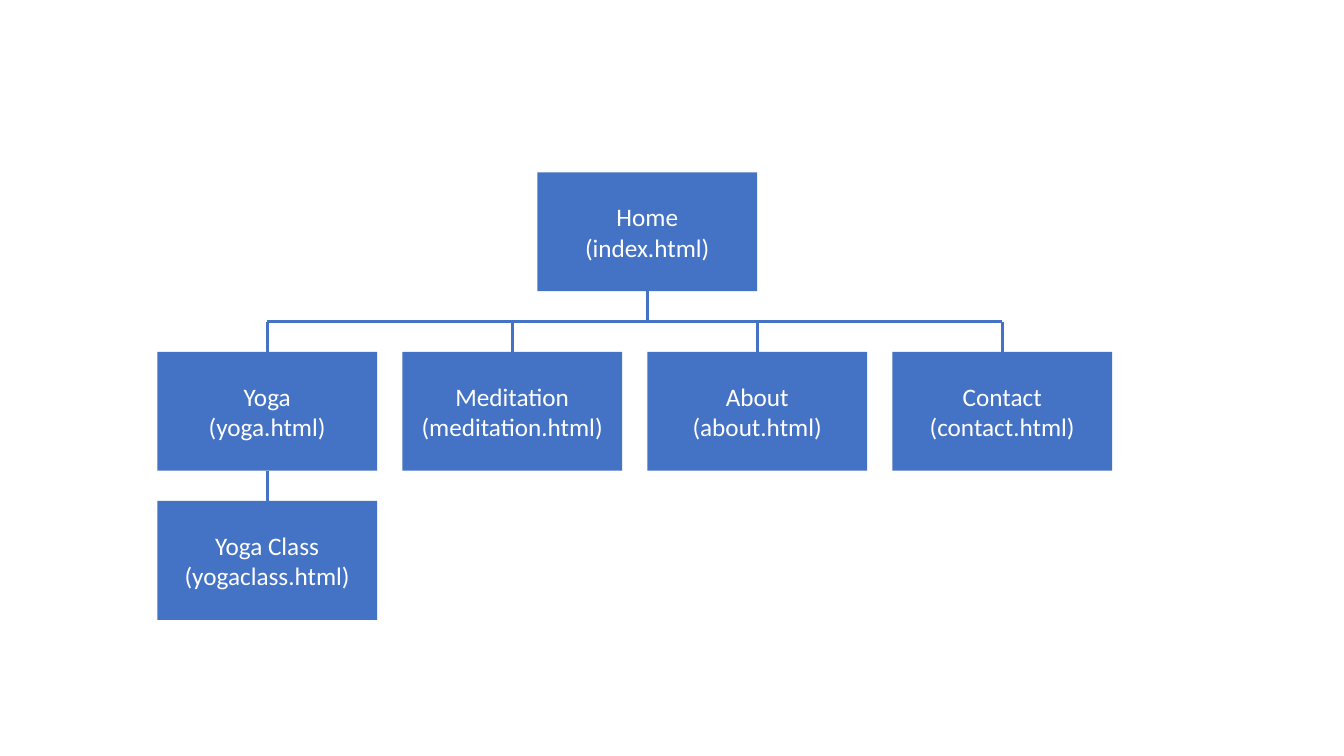
from pptx import Presentation
from pptx.dml.color import RGBColor
from pptx.enum.shapes import MSO_CONNECTOR, MSO_SHAPE
from pptx.enum.text import MSO_ANCHOR, PP_ALIGN
from pptx.oxml import parse_xml
from pptx.oxml.ns import nsdecls
from pptx.util import Inches, Pt

BLUE = "4472C4"
WHITE = "FFFFFF"
CARD_WIDTH = 2.18
CARD_HEIGHT = 1.18
COLUMN_STEP = 2.43
ROW_GAP = 0.3
SECTIONS = [
    ("Yoga", "yoga.html"),
    ("Meditation", "meditation.html"),
    ("About", "about.html"),
    ("Contact", "contact.html"),
]


def color(value):
    return RGBColor.from_string(value)


def add_card(page, left, top, title, filename):
    card = page.shapes.add_shape(
        MSO_SHAPE.RECTANGLE,
        Inches(left), Inches(top), Inches(CARD_WIDTH), Inches(CARD_HEIGHT),
    )
    card.shadow.inherit = False
    card.fill.solid()
    card.fill.fore_color.rgb = color(BLUE)
    card.line.fill.background()
    frame = card.text_frame
    frame.word_wrap = True
    frame.vertical_anchor = MSO_ANCHOR.MIDDLE
    for index, text in enumerate((title, f"({filename})")):
        para = frame.add_paragraph() if index else frame.paragraphs[0]
        para.alignment = PP_ALIGN.CENTER
        span = para.add_run()
        span.text = text
        span.font.name = "Calibri"
        span.font.size = Pt(18)
        span.font.color.rgb = color(WHITE)


def add_link(page, start_x, start_y, end_x, end_y):
    link = page.shapes.add_connector(
        MSO_CONNECTOR.STRAIGHT,
        Inches(start_x), Inches(start_y), Inches(end_x), Inches(end_y),
    )
    link.line.color.rgb = color(BLUE)
    link.line.width = Pt(2.25)
    link._element.spPr.append(parse_xml(f"<a:effectLst {nsdecls('a')}/>"))


def add_site_map(page, left, top):
    home_left = left + 3.77
    home_center = home_left + CARD_WIDTH / 2
    home_bottom = top + CARD_HEIGHT
    rail = home_bottom + ROW_GAP
    section_top = rail + ROW_GAP
    section_bottom = section_top + CARD_HEIGHT
    class_top = section_bottom + ROW_GAP
    first_center = left + CARD_WIDTH / 2
    last_center = first_center + (len(SECTIONS) - 1) * COLUMN_STEP

    add_card(page, home_left, top, "Home", "index.html")
    add_link(page, home_center, home_bottom, home_center, rail)
    add_link(page, first_center, rail, last_center, rail)
    for column, (title, filename) in enumerate(SECTIONS):
        offset = column * COLUMN_STEP
        center = first_center + offset
        add_card(page, left + offset, section_top, title, filename)
        add_link(page, center, rail, center, section_top)
    add_link(page, first_center, section_bottom, first_center, class_top)
    add_card(page, left, class_top, "Yoga Class", "yogaclass.html")


def main():
    deck = Presentation()
    deck.slide_width = Inches(13.33)
    deck.slide_height = Inches(7.5)
    page = deck.slides.add_slide(deck.slide_layouts[6])
    add_site_map(page, 1.56, 1.71)
    deck.save("out.pptx")


if __name__ == "__main__":
    main()
